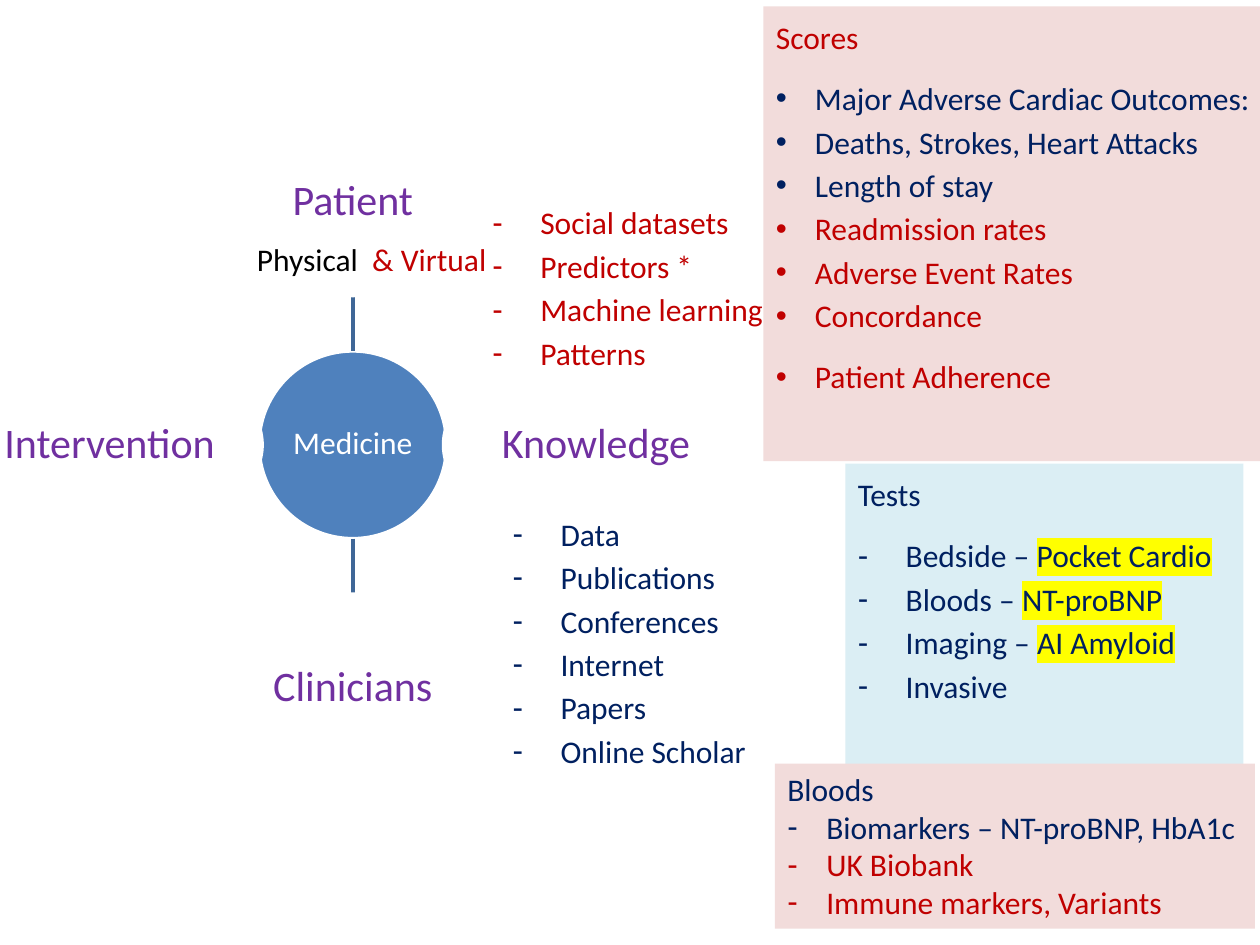
from dataclasses import dataclass

from lxml import etree
from pptx import Presentation
from pptx.dml.color import RGBColor
from pptx.enum.shapes import MSO_CONNECTOR, MSO_SHAPE
from pptx.enum.text import MSO_ANCHOR, PP_ALIGN
from pptx.oxml.ns import qn
from pptx.util import Inches, Pt

ELLIPSE, RECTANGLE = MSO_SHAPE.OVAL, MSO_SHAPE.RECTANGLE
STRAIGHT = MSO_CONNECTOR.STRAIGHT
TOP, MIDDLE = MSO_ANCHOR.TOP, MSO_ANCHOR.MIDDLE
LEFT, CENTER = PP_ALIGN.LEFT, PP_ALIGN.CENTER


@dataclass(frozen=True)
class Theme:
    font: str = "Calibri"
    body: int = 18
    heading: int = 24
    outline: int = 2
    hub: str = "4F81BD"
    spoke: str = "3F6797"
    white: str = "FFFFFF"
    black: str = "000000"
    purple: str = "7030A0"
    navy: str = "002060"
    red: str = "C00000"
    pink: str = "F2DCDB"
    aqua: str = "DBEEF4"
    marker: str = "FFFF00"


THEME = Theme()


@dataclass(frozen=True)
class Line:
    text: str
    color: str = THEME.navy
    marked: str = ""
    bullet: str = "-"
    after: int = 0


@dataclass(frozen=True)
class Panel:
    box: tuple[float, float, float, float]
    lines: list[Line]
    fill: str = ""
    indent: float = 0.38
    spacing: float = 1.15


@dataclass(frozen=True)
class Satellite:
    label: str
    dx: int
    dy: int


HUB_CENTER = (2.8, 3.53)
HUB_SIZE = 1.49
SATELLITE_WIDTH = 2.42
REACH = 1.93

SATELLITES = [
    Satellite("Patient", 0, -1),
    Satellite("Knowledge", 1, 0),
    Satellite("Clinicians", 0, 1),
    Satellite("Intervention", -1, 0),
]

SOURCES = ["Data", "Publications", "Conferences", "Internet", "Papers", "Online Scholar"]
INSIGHTS = ["Social datasets", "Predictors *", "Machine learning", "Patterns"]
PANELS = [
    Panel((3.97, 3.99, 2.12, 2.19), [Line(source) for source in SOURCES]),
    Panel((3.81, 1.52, 2.61, 1.49), [Line(insight, THEME.red) for insight in INSIGHTS]),
    Panel((6.71, 3.68, 3.16, 2.43), [
        Line("Tests", bullet="", after=10),
        Line("Bedside – ", marked="Pocket Cardio"),
        Line("Bloods – ", marked="NT-proBNP"),
        Line("Imaging – ", marked="AI Amyloid"),
        Line("Invasive", after=10),
    ], THEME.aqua),
    Panel((6.06, 0.05, 4, 3.61), [
        Line("Scores", THEME.red, bullet="", after=10),
        Line("Major Adverse Cardiac Outcomes:", bullet="•"),
        Line("Deaths, Strokes, Heart Attacks", bullet="•"),
        Line("Length of stay", bullet="•"),
        Line("Readmission rates", THEME.red, bullet="•"),
        Line("Adverse Event Rates", THEME.red, bullet="•"),
        Line("Concordance", THEME.red, bullet="•", after=10),
        Line("Patient Adherence", THEME.red, bullet="•", after=10),
    ], THEME.pink, indent=0.31),
    Panel((6.15, 6.06, 3.81, 1.31), [
        Line("Bloods", bullet=""),
        Line("Biomarkers – NT-proBNP, HbA1c"),
        Line("UK Biobank", THEME.red),
        Line("Immune markers, Variants", THEME.red),
    ], THEME.pink, indent=0.31, spacing=1),
]


def add_text(paragraph, text: str, *, color: str, size: int = THEME.body,
             highlight: str = "") -> None:
    run = paragraph.add_run()
    run.text = text
    run.font.name = THEME.font
    run.font.size = Pt(size)
    run.font.color.rgb = RGBColor.from_string(color)
    if highlight:
        marker = etree.Element(qn("a:highlight"))
        etree.SubElement(marker, qn("a:srgbClr"), val=highlight)
        run.font._element.find(qn("a:solidFill")).addnext(marker)


def add_bullet(paragraph, symbol: str, indent: float) -> None:
    properties = paragraph._p.get_or_add_pPr()
    properties.set("marL", str(Inches(indent)))
    properties.set("indent", str(-Inches(indent)))
    etree.SubElement(properties, qn("a:buFont"), typeface="Arial")
    etree.SubElement(properties, qn("a:buChar"), char=symbol)


def add_filled(slide, preset, box: tuple[float, float, float, float], fill: str):
    shape = slide.shapes.add_shape(preset, *map(Inches, box))
    shape.shadow.inherit = False
    shape.fill.solid()
    shape.fill.fore_color.rgb = RGBColor.from_string(fill)
    shape.line.fill.background()
    return shape


def add_disc(slide, center: tuple[float, float], width: float, label: str, *,
             fill: str, color: str, size: int) -> None:
    x, y = center
    disc = add_filled(slide, ELLIPSE,
                      (x - width / 2, y - HUB_SIZE / 2, width, HUB_SIZE), fill)
    disc.line.color.rgb = RGBColor.from_string(THEME.white)
    disc.line.width = Pt(THEME.outline)
    frame = disc.text_frame
    frame.word_wrap = False
    frame.vertical_anchor = MIDDLE
    frame.margin_left = frame.margin_right = Inches(0.02)
    frame.margin_top = frame.margin_bottom = Inches(0.02)
    paragraph = frame.paragraphs[0]
    paragraph.alignment = CENTER
    paragraph.line_spacing = 0.9
    add_text(paragraph, label, color=color, size=size)


def add_satellite(slide, satellite: Satellite) -> None:
    x, y = HUB_CENTER
    inner = HUB_SIZE / 2
    outer = REACH - (SATELLITE_WIDTH if satellite.dx else HUB_SIZE) / 2
    ends = [(x + satellite.dx * r, y + satellite.dy * r) for r in (inner, outer)]
    spoke = slide.shapes.add_connector(STRAIGHT, *(Inches(v) for end in ends for v in end))
    spoke.line.color.rgb = RGBColor.from_string(THEME.spoke)
    spoke.line.width = Pt(THEME.outline)
    etree.SubElement(spoke._element.spPr, qn("a:effectLst"))
    center = (x + satellite.dx * REACH, y + satellite.dy * REACH)
    add_disc(slide, center, SATELLITE_WIDTH, satellite.label,
             fill=THEME.white, color=THEME.purple, size=THEME.heading)


def add_panel(slide, panel: Panel) -> None:
    if panel.fill:
        holder = add_filled(slide, RECTANGLE, panel.box, panel.fill)
    else:
        holder = slide.shapes.add_textbox(*map(Inches, panel.box))
    frame = holder.text_frame
    frame.word_wrap = True
    frame.vertical_anchor = TOP
    for position, line in enumerate(panel.lines):
        paragraph = frame.add_paragraph() if position else frame.paragraphs[0]
        if line.bullet:
            add_bullet(paragraph, line.bullet, panel.indent)
        paragraph.alignment = LEFT
        paragraph.line_spacing = panel.spacing
        paragraph.space_after = Pt(line.after)
        add_text(paragraph, line.text, color=line.color)
        if line.marked:
            add_text(paragraph, line.marked, color=line.color, highlight=THEME.marker)


def main() -> None:
    deck = Presentation()
    deck.slide_width, deck.slide_height = Inches(10), Inches(7.5)
    slide = deck.slides.add_slide(deck.slide_layouts[6])

    add_disc(slide, HUB_CENTER, HUB_SIZE, "Medicine",
             fill=THEME.hub, color=THEME.white, size=THEME.body)
    for satellite in SATELLITES:
        add_satellite(slide, satellite)

    presence = slide.shapes.add_textbox(*map(Inches, (1.94, 1.86, 2.05, 0.4)))
    presence.text_frame.word_wrap = True
    paragraph = presence.text_frame.paragraphs[0]
    add_text(paragraph, "Physical  ", color=THEME.black)
    add_text(paragraph, "& Virtual", color=THEME.red)

    for panel in PANELS:
        add_panel(slide, panel)
    deck.save("out.pptx")


if __name__ == "__main__":
    main()
